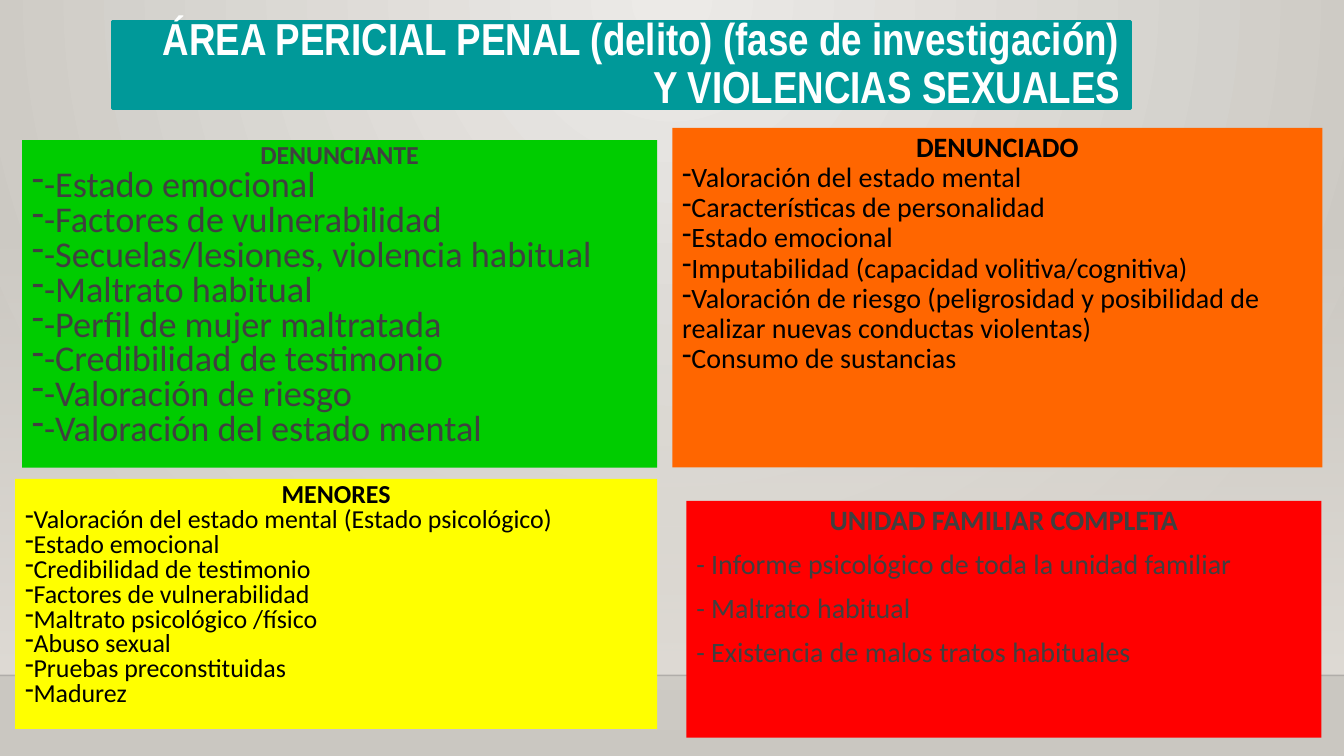
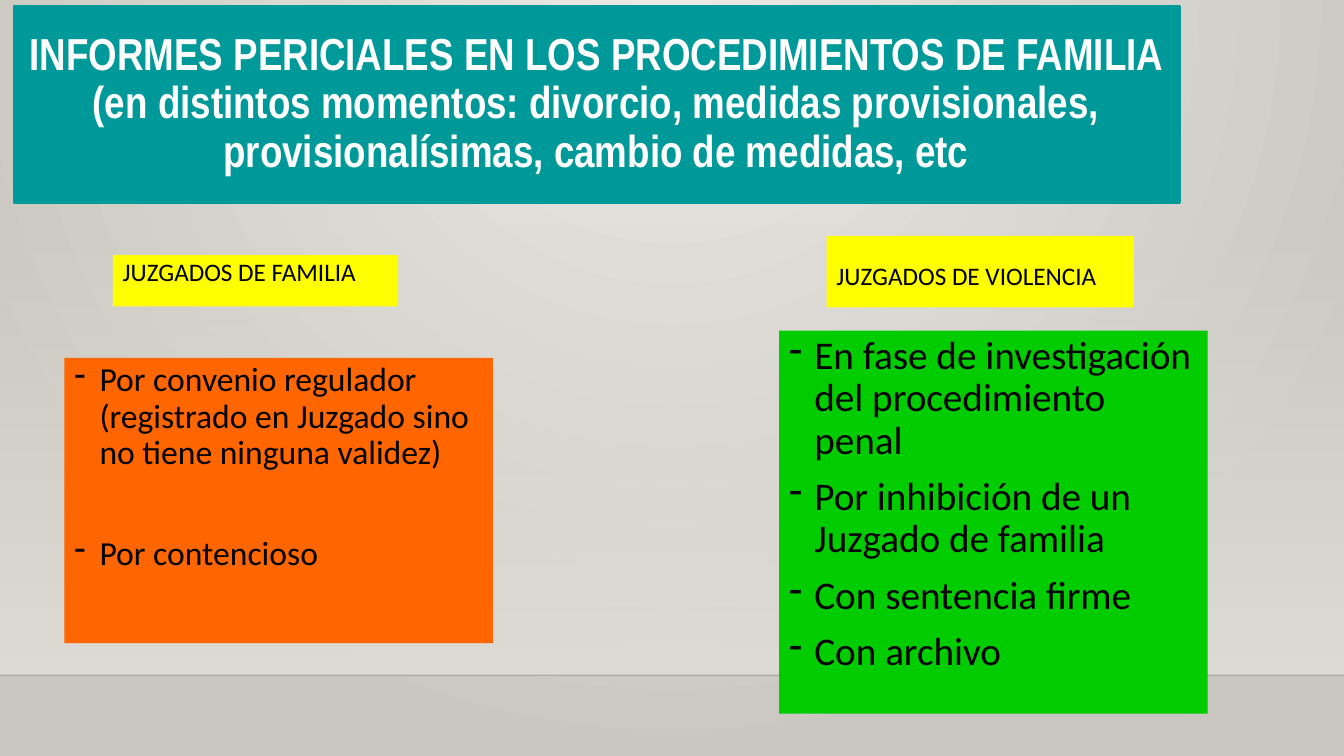
from lxml.etree import SubElement as Sub
from pptx import Presentation
from pptx.dml.color import RGBColor
from pptx.enum.shapes import MSO_CONNECTOR as Conn, MSO_SHAPE as Geo
from pptx.enum.text import MSO_ANCHOR as Anchor, MSO_AUTO_SIZE as Fit, PP_ALIGN as Align
from pptx.oxml.ns import qn
from pptx.util import Pt

WIDE, HIGH = 960, 540
FLOOR = 482.4
TEAL, WHITE, BLACK, GREY = "009999", "FFFFFF", "000000", "404040"
GREEN, YELLOW, ORANGE, RED = "00CC00", "FFFF00", "FF6600", "FF0000"
HANG = 18


def tint(part, code):
    part.rgb = RGBColor.from_string(code)


def paint(shape, code):
    shape.fill.solid()
    tint(shape.fill.fore_color, code)


def place(shape, at):
    shape.left, shape.top, shape.width, shape.height = map(Pt, at)


def blend(fill, first, last):
    fill.gradient()
    for stop, code in zip(fill.gradient_stops, (first, last)):
        tint(stop.color, code)


def fade(node, share):
    """Set the opacity, in percent, of the first colour under node."""
    color = node.find(".//" + qn("a:srgbClr"))
    Sub(color, qn("a:alpha"), val=str(share * 1000))


def write(par, text, size, font, ink, bold=False):
    run = par.add_run()
    run.text = text
    run.font.size, run.font.name, run.font.bold = Pt(size), font, bold
    tint(run.font.color, ink)


def backdrop(master):
    blend(master.background.fill, "ECEAE7", "CAC7C1")
    grad = master.element.find(".//" + qn("a:gradFill"))
    grad.remove(grad.find(qn("a:lin")))
    ring = Sub(grad, qn("a:path"), path="circle")
    Sub(ring, qn("a:fillToRect"), l="43000", t="0", r="43000", b="100000")


def horizon(slide):
    """Build the wall and floor line, and hand them to the slide's layout."""
    wall = slide.shapes.add_shape(Geo.RECTANGLE, 0, Pt(159), Pt(WIDE), Pt(FLOOR - 159))
    wall.shadow.inherit = False
    wall.line.fill.background()
    blend(wall.fill, "DFDBD5", "DFDBD5")
    wall.fill.gradient_angle = 270
    fade(wall.element.spPr, 0)

    edge = slide.shapes.add_connector(Conn.STRAIGHT, 0, Pt(FLOOR), Pt(WIDE), Pt(FLOOR))
    edge.line.width = Pt(1)
    tint(edge.line.color, "000001")
    spot = edge.element.spPr
    fade(spot, 20)
    Sub(spot, qn("a:effectLst"))

    tree = slide.slide_layout.shapes.element
    for spot, shape in enumerate((wall, edge), 2):
        tree.insert(spot, shape.element)


def title(slide, at, lines, align):
    head = slide.shapes.title
    place(head, at)
    paint(head, TEAL)
    tint(head.line.color, TEAL)
    head.line.width = Pt(2)
    frame = head.text_frame
    frame.word_wrap, frame.auto_size = True, Fit.NONE
    frame.vertical_anchor = Anchor.MIDDLE
    for num, text in enumerate(lines):
        par = frame.add_paragraph() if num else frame.paragraphs[0]
        par.alignment, par.line_spacing = align, 0.9
        write(par, text, 32, "Arial Narrow", WHITE, True)


def dash(par, hang):
    props = par._p.get_or_add_pPr()
    props.set("marL", str(Pt(hang)))
    props.set("indent", str(-Pt(hang)))
    Sub(props, qn("a:buChar"), char="-")


def panel(slide, at, fill, lines, size, head="", top=0, ink=BLACK,
          lead=0.9, gap=0, hang=0, marks=True):
    """Add a filled box: an optional centred heading, then the lines."""
    box = slide.shapes.add_textbox(0, 0, 0, 0)
    place(box, at)
    paint(box, fill)
    frame = box.text_frame
    frame.word_wrap = True
    if top:
        frame.margin_top = Pt(top)
    rows = ([head] if head else []) + lines
    for num, text in enumerate(rows):
        par = frame.add_paragraph() if num else frame.paragraphs[0]
        first = bool(head) and num == 0
        if marks and not first:
            dash(par, hang)
        par.line_spacing = lead
        if num and gap:
            par.space_before = Pt(gap)
        if first:
            par.alignment = Align.CENTER
        write(par, text, min(size, 18.5) if first and lead < 0.9 else size,
              "Calibri", ink, first)


def penal(slide):
    title(slide, (80.6, 15.1, 727.2, 62.6),
          ["ÁREA PERICIAL PENAL (delito) (fase de investigación)",
           "Y VIOLENCIAS SEXUALES"], Align.RIGHT)
    panel(slide, (15.8, 100, 453.6, 234), GREEN, [
        "-Estado emocional",
        "-Factores de vulnerabilidad",
        "-Secuelas/lesiones, violencia habitual",
        "-Maltrato habitual",
        "-Perfil de mujer maltratada",
        "-Credibilidad de testimonio",
        "-Valoración de riesgo",
        "-Valoración del estado mental",
    ], 25.9, "DENUNCIANTE", ink=GREY, lead=0.8)
    panel(slide, (10.8, 342, 458.6, 178.6), YELLOW, [
        "Valoración del estado mental (Estado psicológico)",
        "Estado emocional",
        "Credibilidad de testimonio",
        "Factores de vulnerabilidad",
        "Maltrato psicológico /físico",
        "Abuso sexual",
        "Pruebas preconstituidas",
        "Madurez",
    ], 18.5, "MENORES", lead=0.8)
    panel(slide, (480.2, 91.4, 464.4, 242.6), ORANGE, [
        "Valoración del estado mental",
        "Características de personalidad",
        "Estado emocional",
        "Imputabilidad (capacidad volitiva/cognitiva)",
        "Valoración de riesgo (peligrosidad y posibilidad de "
        "realizar nuevas conductas violentas)",
        "Consumo de sustancias",
    ], 20, "DENUNCIADO")
    panel(slide, (490.3, 357.8, 453.6, 169.2), RED, [
        "- Informe psicológico de toda la unidad familiar",
        "- Maltrato habitual",
        "- Existencia de malos tratos habituales",
    ], 20, "UNIDAD FAMILIAR COMPLETA", ink=GREY, gap=10, marks=False)


def family(slide):
    title(slide, (10, 4.3, 832.3, 140.4),
          ["INFORMES PERICIALES EN LOS PROCEDIMIENTOS DE FAMILIA "
           "(en distintos momentos: divorcio, medidas provisionales, "
           "provisionalísimas, cambio de medidas, etc"], Align.CENTER)
    panel(slide, (46, 255.6, 306, 203.8), ORANGE, [
        "Por convenio regulador (registrado en Juzgado sino no tiene ninguna validez)",
        "Por contencioso",
    ], 24, gap=46, hang=HANG)
    panel(slide, (556.6, 236.2, 306, 273.6), GREEN, [
        "En fase de investigación del procedimiento penal",
        "Por inhibición de un Juzgado de familia",
        "Con sentencia firme",
        "Con archivo",
    ], 28, gap=10, hang=HANG)
    panel(slide, (80.6, 182.2, 203.8, 36.7), YELLOW,
          ["JUZGADOS DE FAMILIA"], 18, marks=False)
    panel(slide, (590.4, 168.5, 219.6, 51.1), YELLOW,
          ["JUZGADOS DE VIOLENCIA"], 18, top=21.4, lead=0.8, marks=False)


def main():
    deck = Presentation()
    deck.slide_width, deck.slide_height = Pt(WIDE), Pt(HIGH)
    backdrop(deck.slide_master)
    plain = deck.slide_layouts[5]
    slides = [deck.slides.add_slide(plain) for _ in range(2)]
    horizon(slides[0])
    penal(slides[0])
    family(slides[1])
    deck.save("out.pptx")


if __name__ == "__main__":
    main()
